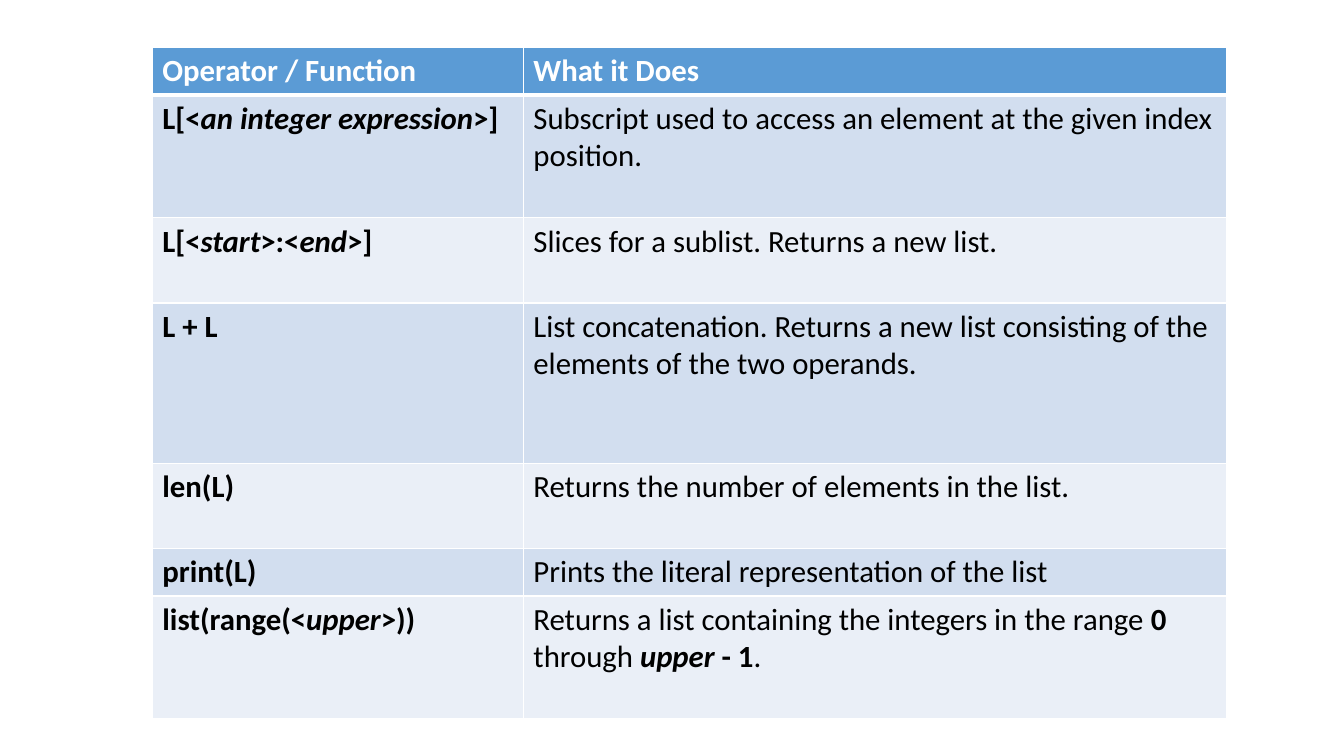
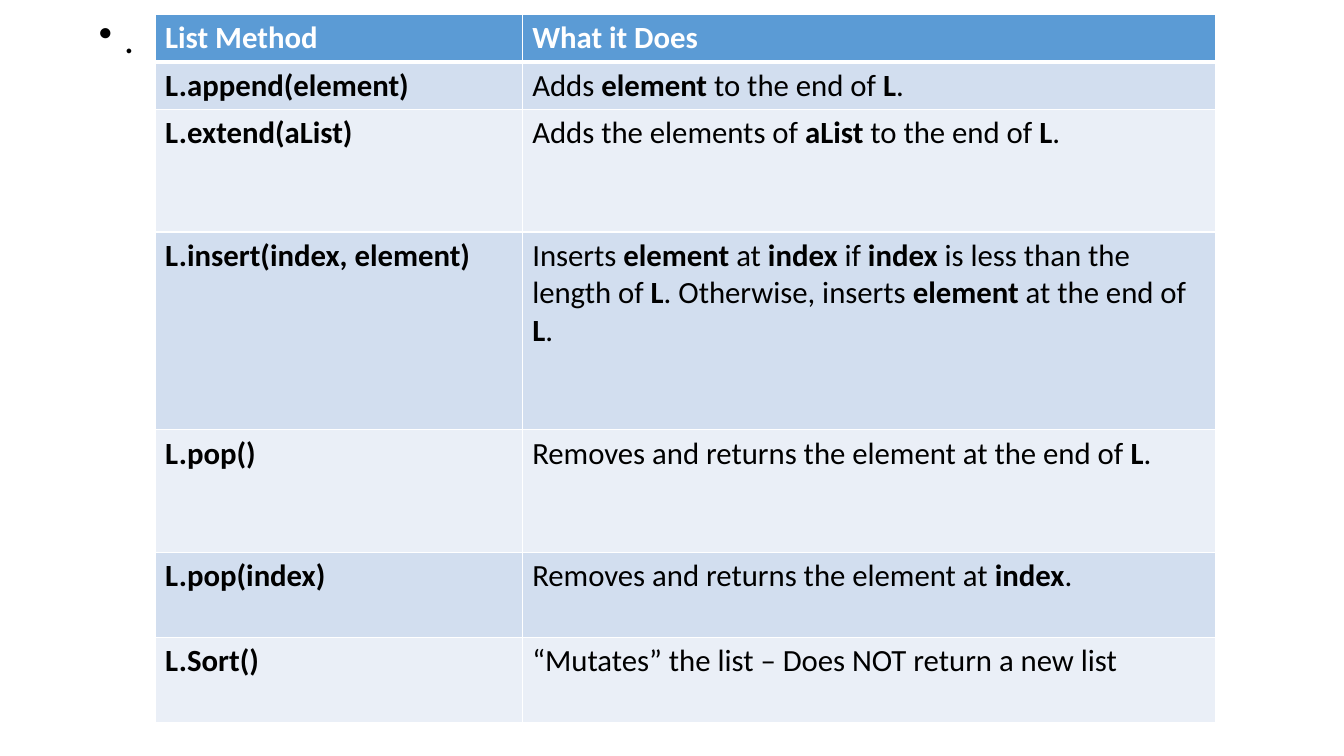
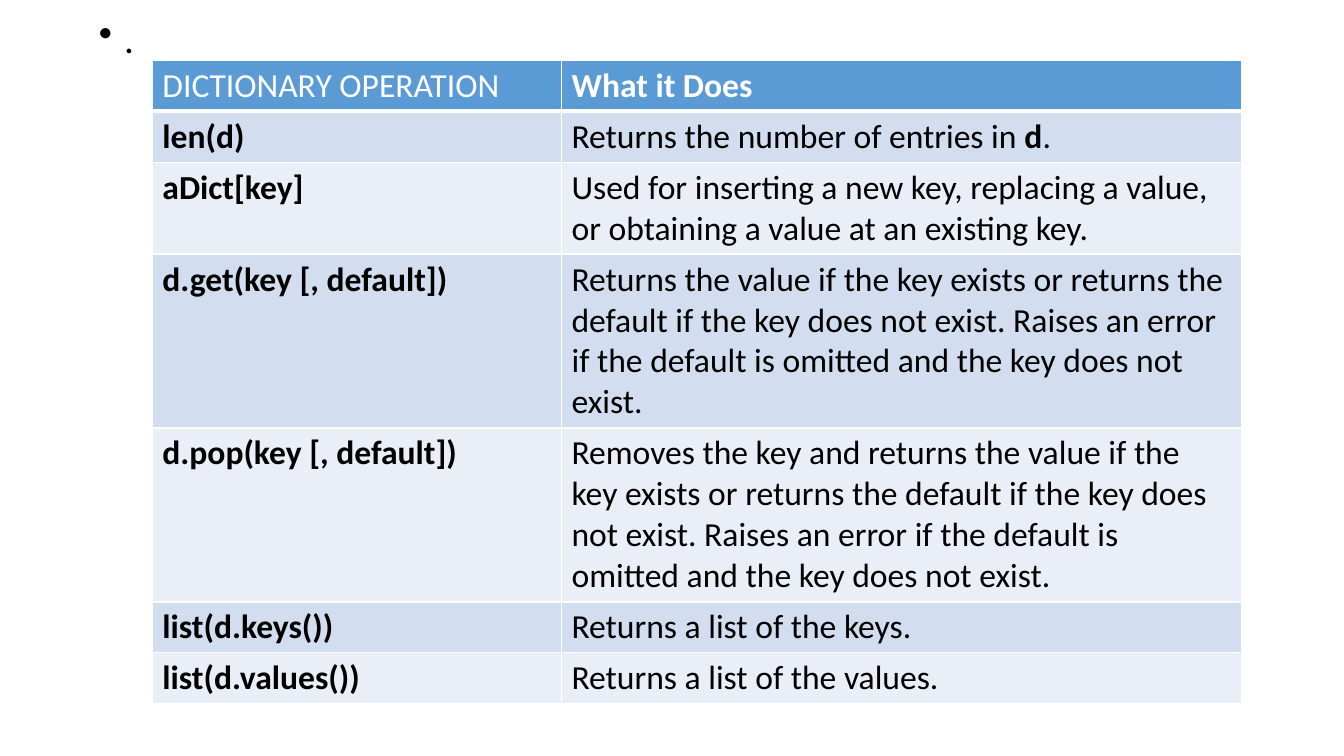
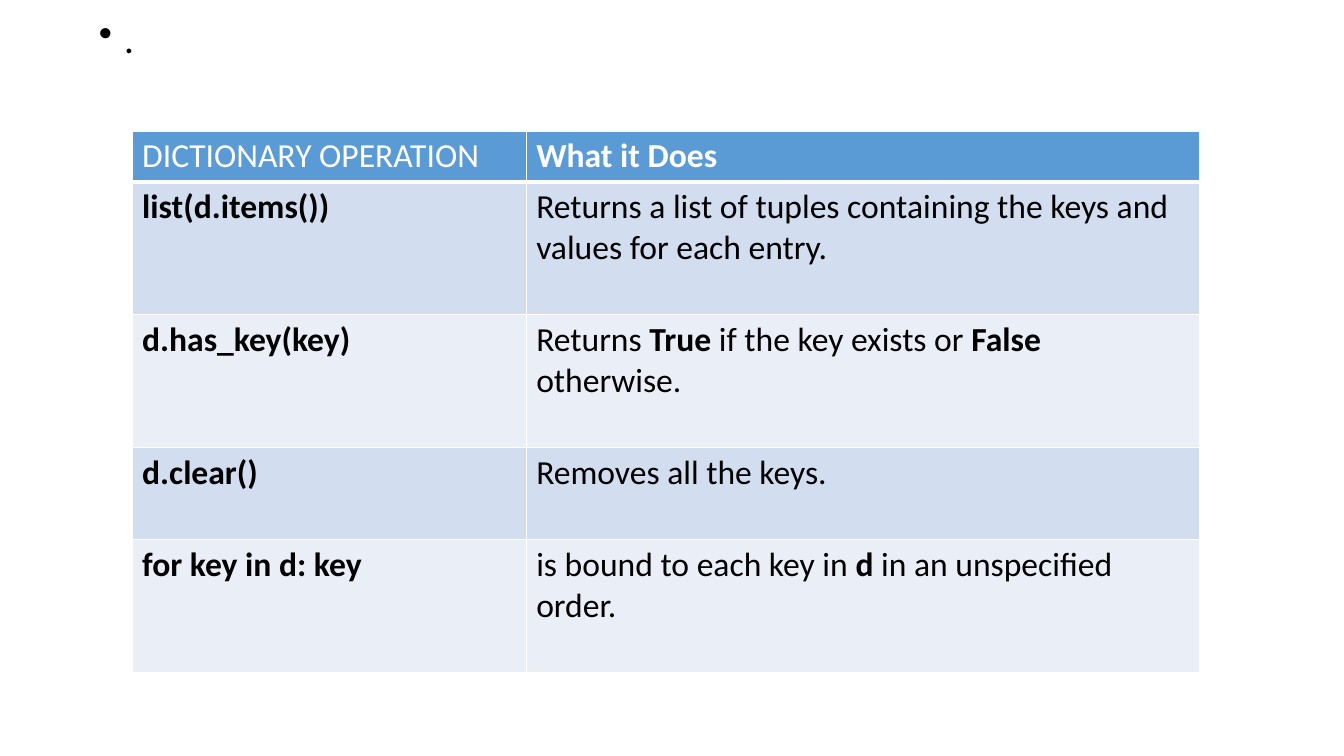
from dataclasses import dataclass

from lxml.etree import SubElement as Sub
from pptx import Presentation
from pptx.dml.color import RGBColor
from pptx.oxml.ns import qn
from pptx.slide import Slide
from pptx.table import _Cell as Cell
from pptx.text.text import _Paragraph as Para
from pptx.util import Cm, Pt

WHITE = RGBColor(0xFF, 0xFF, 0xFF)
BLACK = RGBColor(0, 0, 0)
BLUE = RGBColor(0x5B, 0x9B, 0xD5)
BANDS = (RGBColor(0xEA, 0xEF, 0xF7), RGBColor(0xD2, 0xDE, 0xEF))
FONT = "Calibri"
PAD = 0.25  # cell margins above and below, cm
LEAD = 0.04306  # line height in cm for each point of size


@dataclass
class Row:
    """One entry; lines is the row's height in lines of text."""
    lines: int
    code: str
    text: str


@dataclass
class Grid:
    left: float
    top: float
    widths: tuple[float, float]
    size: int
    head: str
    rows: list[Row]
    dot: bool = True


GRIDS = [
    Grid(3.84, 1.2, (9.35, 17.73), 22, "*Operator / Function*", [
        Row(3, "L[<~an integer expression~>]",
            "Subscript used to access an element at the given index position."),
        Row(2, "L[<~start~>:<~end~>]", "Slices for a sublist. Returns a new list."),
        Row(4, "L + L", "List concatenation. Returns a new list consisting of "
            "the elements of the two operands."),
        Row(2, "len(L)", "Returns the number of elements in the list."),
        Row(1, "print(L)", "Prints the literal representation of the list"),
        Row(3, "list(range(<~upper~>))", "Returns a list containing the integers "
            "in the range *0 *through *~upper ~- 1*."),
    ], dot=False),
    Grid(3.91, 0.36, (9.25, 17.48), 22, "*List Method*", [
        Row(1, "L.append(element)", "Adds *element *to the end of *L*."),
        Row(3, "L.extend(aList)", "Adds the elements of *aList *to the end of *L*."),
        Row(5, "L.insert(index, element)",
            "Inserts *element *at *index *if *index *is less than the length of "
            "*L*. Otherwise, inserts *element *at the end of *L*."),
        Row(3, "L.pop()", "Removes and returns the element at the end of *L*."),
        Row(2, "L.pop(index)", "Removes and returns the element at *index*."),
        Row(2, "L.Sort()", "“Mutates” the list – Does NOT return a new list"),
    ]),
    Grid(3.84, 1.52, (10.31, 17.15), 24, "DICTIONARY OPERATION", [
        Row(1, "len(d)", "Returns the number of entries in *d*."),
        Row(2, "aDict[key]", "Used for inserting a new key, replacing a value, "
            "or obtaining a value at an existing key."),
        Row(4, "d.get(key [, default])",
            "Returns the value if the key exists or returns the default if the key "
            "does not exist. Raises an error if the default is omitted and the key "
            "does not exist."),
        Row(4, "d.pop(key [, default])",
            "Removes the key and returns the value if the key exists or returns the "
            "default if the key does not exist. Raises an error if the default is "
            "omitted and the key does not exist."),
        Row(1, "list(d.keys())", "Returns a list of the keys."),
        Row(1, "list(d.values())", "Returns a list of the values."),
    ]),
    Grid(3.33, 3.3, (9.93, 16.97), 24, "DICTIONARY OPERATION", [
        Row(3, "list(d.items())", "Returns a list of tuples containing the keys "
            "and values for each entry."),
        Row(3, "d.has_key(key)",
            "Returns *True *if the key exists or *False *otherwise."),
        Row(2, "d.clear()", "Removes all the keys."),
        Row(3, "for key in d: key",
            "is bound to each key in *d *in an unspecified order."),
    ]),
]


def write(para: Para, text: str, size: int, ink: RGBColor) -> None:
    """Fill a paragraph; *stars* mark bold and ~tildes~ italic."""
    font = para.font
    font.name, font.size, font.color.rgb = FONT, Pt(size), ink
    parts = [(part, i % 2 == 1, j % 2 == 1)
             for i, span in enumerate(text.split("*"))
             for j, part in enumerate(span.split("~")) if part]
    font.bold = all(bold for _, bold, _ in parts)
    for part, bold, slant in parts:
        run = para.add_run()
        run.text = part
        if bold != font.bold:
            run.font.bold = bold
        if slant:
            run.font.italic = True


def paint(cell: Cell, fill: RGBColor, above: int, below: int) -> None:
    """Give a cell white borders and a fill."""
    props = cell._tc.get_or_add_tcPr()
    for side, width in zip("LRTB", (1, 1, above, below)):
        line = Sub(props, qn(f"a:ln{side}"), w=str(Pt(width)))
        Sub(Sub(line, qn("a:solidFill")), qn("a:srgbClr"), val=str(WHITE))
    cell.fill.solid()
    cell.fill.fore_color.rgb = fill


def add_dot(slide: Slide) -> None:
    """Add the bulleted text that lies behind a table."""
    frame = slide.shapes.add_textbox(
        Cm(2.24), Cm(0.36), Cm(29.06), Cm(18.69)).text_frame
    frame.word_wrap = True
    para = frame.paragraphs[0]
    para.line_spacing = 0.9
    para.space_before = Pt(10)
    write(para, ".", 28, BLACK)
    props = para._p.get_or_add_pPr()
    props.set("marL", str(Cm(0.64)))
    props.set("indent", str(-Cm(0.64)))
    mark = Sub(props, qn("a:buChar"), char="•")
    props.find(qn("a:defRPr")).addprevious(mark)


def add_grid(slide: Slide, grid: Grid) -> None:
    rows = [(1, grid.head, "*What it Does*")]
    rows += [(row.lines, f"*{row.code}*", row.text) for row in grid.rows]
    highs = [Cm(PAD + lines * grid.size * LEAD) for lines, *_ in rows]
    table = slide.shapes.add_table(
        len(rows), 2, Cm(grid.left), Cm(grid.top),
        Cm(sum(grid.widths)), sum(highs)).table
    table.first_row = table.horz_banding = False
    for col, width in zip(table.columns, grid.widths):
        col.width = Cm(width)
    for r, (_, *texts) in enumerate(rows):
        table.rows[r].height = highs[r]
        for c, text in enumerate(texts):
            cell = table.cell(r, c)
            paint(cell, BANDS[r % 2] if r else BLUE,
                  3 if r == 1 else 1, 1 if r else 3)
            write(cell.text_frame.paragraphs[0], text, grid.size,
                  BLACK if r else WHITE)


def main() -> None:
    deck = Presentation()
    deck.slide_width, deck.slide_height = Cm(33.87), Cm(19.05)
    for grid in GRIDS:
        slide = deck.slides.add_slide(deck.slide_layouts[6])
        if grid.dot:
            add_dot(slide)
        add_grid(slide, grid)
    deck.save("out.pptx")


if __name__ == "__main__":
    main()
